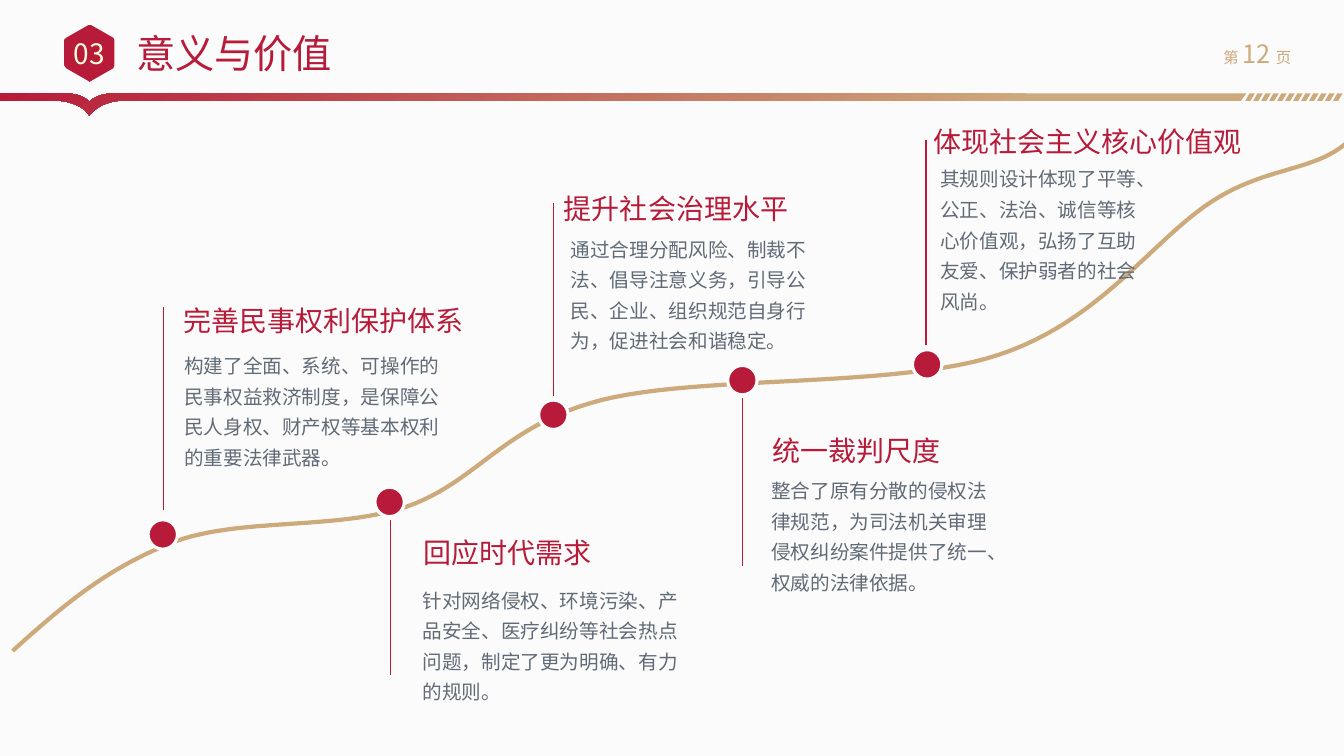
from typing import NamedTuple

from lxml import etree
from pptx import Presentation
from pptx.dml.color import RGBColor
from pptx.enum.shapes import MSO_CONNECTOR, MSO_SHAPE
from pptx.enum.text import MSO_ANCHOR, MSO_AUTO_SIZE, PP_ALIGN
from pptx.oxml.ns import qn
from pptx.util import Emu, Pt

OVAL, STRAIGHT = MSO_SHAPE.OVAL, MSO_CONNECTOR.STRAIGHT
LEFT, CENTER = PP_ALIGN.LEFT, PP_ALIGN.CENTER
TOP, MIDDLE = MSO_ANCHOR.TOP, MSO_ANCHOR.MIDDLE
GROW, FIXED = MSO_AUTO_SIZE.SHAPE_TO_FIT_TEXT, MSO_AUTO_SIZE.NONE

CRIMSON = RGBColor(0xB7, 0x1B, 0x39)
GOLD = RGBColor(0xCD, 0xAA, 0x7B)
SLATE = RGBColor(0x61, 0x6B, 0x77)
CREAM = RGBColor(0xFF, 0xFD, 0xD7)
DOT_RING = RGBColor(0xFC, 0xFC, 0xFC)
PAPER = RGBColor(0xFB, 0xFB, 0xFB)
HEADING_FONT, BODY_FONT = "Noto Sans CJK SC", "Open Sans"

EMU_PER_PX = 9525
DOT_SIZE = 28
STRIPE_COUNT, STRIPE_START, STRIPE_PITCH = 12, 1186, 7.6
CURVE_STEPS = 24


class Box(NamedTuple):
    left: int
    top: int
    width: int
    height: int


class Milestone(NamedTuple):
    heading: str
    body: str
    dot: tuple[int, int]
    stem: tuple[int, int, int]  # x, start y, end y
    heading_box: Box
    body_box: Box


MILESTONES = [
    Milestone("完善民事权利保护体系",
              "构建了全面、系统、可操作的民事权益救济制度，是保障公民人身权、财产权等基本权利的重要法律武器。",
              (141, 495), (156, 486, 292), Box(158, 284, 300, 42), Box(166, 326, 279, 127)),
    Milestone("回应时代需求",
              "针对网络侵权、环境污染、产品安全、医疗纠纷等社会热点问题，制定了更为明确、有力的规则。",
              (357, 464), (372, 643, 495), Box(393, 505, 181, 42), Box(393, 549, 275, 127)),
    Milestone("提升社会治理水平",
              "通过合理分配风险、制裁不法、倡导注意义务，引导公民、企业、组织规范自身行为，促进社会和谐稳定。",
              (513, 381), (527, 377, 193), Box(517, 178, 254, 42), Box(534, 215, 261, 127)),
    Milestone("统一裁判尺度",
              "整合了原有分散的侵权法律规范，为司法机关审理侵权纠纷案件提供了统一、权威的法律依据。",
              (693, 348), (707, 539, 379), Box(725, 408, 181, 42), Box(725, 445, 238, 127)),
    Milestone("体现社会主义核心价值观",
              "其规则设计体现了平等、公正、法治、诚信等核心价值观，弘扬了互助友爱、保护弱者的社会风尚。",
              (869, 333), (882, 329, 133), Box(867, 114, 338, 42), Box(886, 148, 213, 156)),
]

# Outlines: one point is a straight segment, three points a cubic curve
ROAD = [
    [(12, 620)],
    [(66, 571), (105, 540), (166, 516)],
    [(228, 493), (319, 505), (386, 483)],
    [(454, 460), (479, 405), (573, 381)],
    [(668, 357), (855, 370), (951, 338)],
    [(1048, 306), (1097, 229), (1154, 192)],
    [(1211, 155), (1261, 165), (1292, 126)],
]
RIBBON = [
    [(0, 89)], [(62, 89)],
    [(72, 89), (81, 92), (85, 97)],
    [(90, 92), (99, 89), (108, 89)],
    [(1187, 89)], [(1182, 96)], [(116, 96)],
    [(106, 96), (96, 100), (90, 105)],
    [(88, 107), (86, 109), (85, 110)],
    [(84, 109), (83, 107), (81, 105)],
    [(75, 100), (64, 96), (54, 96)],
    [(0, 96)],
]
BADGE = [[point] for point in [
    (85, 78), (84, 77), (63, 65), (61, 62), (61, 38), (63, 36), (84, 24),
    (87, 24), (108, 36), (109, 38), (109, 62), (108, 65), (87, 77)]]


def px(length: float) -> Emu:
    return Emu(round(length * EMU_PER_PX))


def place(box: Box) -> list[Emu]:
    return [px(length) for length in box]


def trace(segments) -> list[tuple[Emu, Emu]]:
    """Turn straight and cubic segments into a run of points."""
    points = []
    for segment in segments:
        if len(segment) == 1:
            points += segment
            continue
        controls = [points[-1], *segment]
        for step in range(1, CURVE_STEPS + 1):
            t = step / CURVE_STEPS
            weights = ((1 - t) ** 3, 3 * t * (1 - t) ** 2, 3 * t * t * (1 - t), t ** 3)
            points.append(tuple(sum(w * c[axis] for w, c in zip(weights, controls))
                                for axis in (0, 1)))
    return [(px(x), px(y)) for x, y in points]


def draw_outline(shapes, segments, closed: bool = True, fill: RGBColor | None = None):
    start, *rest = trace(segments)
    builder = shapes.build_freeform(*start)
    builder.add_line_segments(rest, close=closed)
    outline = builder.convert_to_shape()
    outline.shadow.inherit = False
    outline.line.fill.background()
    if fill is None:
        outline.fill.background()
    else:
        outline.fill.solid()
        outline.fill.fore_color.rgb = fill
    return outline


def write(frame, text: str, *, size: int, color: RGBColor, font: str = HEADING_FONT,
          align=LEFT, anchor=TOP, spacing: float = 1.0, fit=GROW) -> None:
    """Append one formatted run to the frame's first paragraph."""
    frame.word_wrap, frame.auto_size, frame.vertical_anchor = True, fit, anchor
    paragraph = frame.paragraphs[0]
    paragraph.alignment, paragraph.line_spacing = align, spacing
    run = paragraph.add_run()
    run.text = text
    run.font.size, run.font.name, run.font.color.rgb = Pt(size), font, color
    properties = run.font._element
    properties.set("lang", "zh-CN")
    etree.SubElement(properties, qn("a:ea")).set("typeface", font)


def draw_milestone(shapes, milestone: Milestone) -> None:
    dot = shapes.add_shape(OVAL, *place(Box(*milestone.dot, DOT_SIZE, DOT_SIZE)))
    dot.shadow.inherit = False
    dot.fill.solid()
    dot.fill.fore_color.rgb = CRIMSON
    dot.line.color.rgb, dot.line.width = DOT_RING, Pt(2.25)

    x, start, end = milestone.stem
    stem = shapes.add_connector(STRAIGHT, px(x), px(start), px(x), px(end))
    stem.line.color.rgb, stem.line.width = CRIMSON, Pt(1)
    etree.SubElement(stem._element.spPr, qn("a:effectLst"))

    body = shapes.add_textbox(*place(milestone.body_box))
    write(body.text_frame, milestone.body, size=14, color=SLATE, font=BODY_FONT, spacing=1.3)
    heading = shapes.add_textbox(*place(milestone.heading_box))
    write(heading.text_frame, milestone.heading, size=20, color=CRIMSON, align=CENTER)


def draw_header(shapes) -> None:
    # Page number
    page_number = shapes.add_textbox(*place(Box(1140, 36, 115, 29)))
    for text, size in (("第 ", 11), ("12 ", 18), ("页", 11)):
        write(page_number.text_frame, text, size=size, color=GOLD, align=CENTER,
              anchor=MIDDLE, fit=FIXED)

    # Slanted stripes at the end of the ribbon
    stripes = shapes.add_group_shape()
    for index in range(STRIPE_COUNT):
        left = STRIPE_START + index * STRIPE_PITCH
        draw_outline(stripes.shapes, [[(left, 96)], [(left + 4, 89)], [(left + 9, 89)],
                                      [(left + 5, 96)]], fill=GOLD)

    # Ribbon
    ribbon = draw_outline(shapes, RIBBON)
    ribbon.fill.gradient()
    ribbon.fill.gradient_angle = 120
    for stop, position, color in zip(ribbon.fill.gradient_stops, (0.19, 1), (GOLD, CRIMSON)):
        stop.position, stop.color.rgb = position, color

    # Section badge
    badge = draw_outline(shapes, BADGE, fill=CRIMSON)
    badge.text_frame.margin_left = badge.text_frame.margin_right = 0
    write(badge.text_frame, "03", size=20, color=CREAM, align=CENTER, anchor=MIDDLE, fit=FIXED)


def main() -> None:
    deck = Presentation()
    deck.slide_width, deck.slide_height = px(1280), px(720)
    slide = deck.slides.add_slide(deck.slide_layouts[5])
    slide.background.fill.solid()
    slide.background.fill.fore_color.rgb = PAPER

    # Title
    title = slide.shapes.title
    title.left, title.top, title.width, title.height = place(Box(120, 23, 220, 55))
    write(title.text_frame, "意义与价值", size=28, color=CRIMSON, anchor=MIDDLE, fit=FIXED)

    draw_header(slide.shapes)

    # Rising road with its milestones
    road = draw_outline(slide.shapes, ROAD, closed=False)
    road.line.color.rgb, road.line.width = GOLD, Pt(3)
    for milestone in MILESTONES:
        draw_milestone(slide.shapes, milestone)

    deck.save("out.pptx")


if __name__ == "__main__":
    main()
